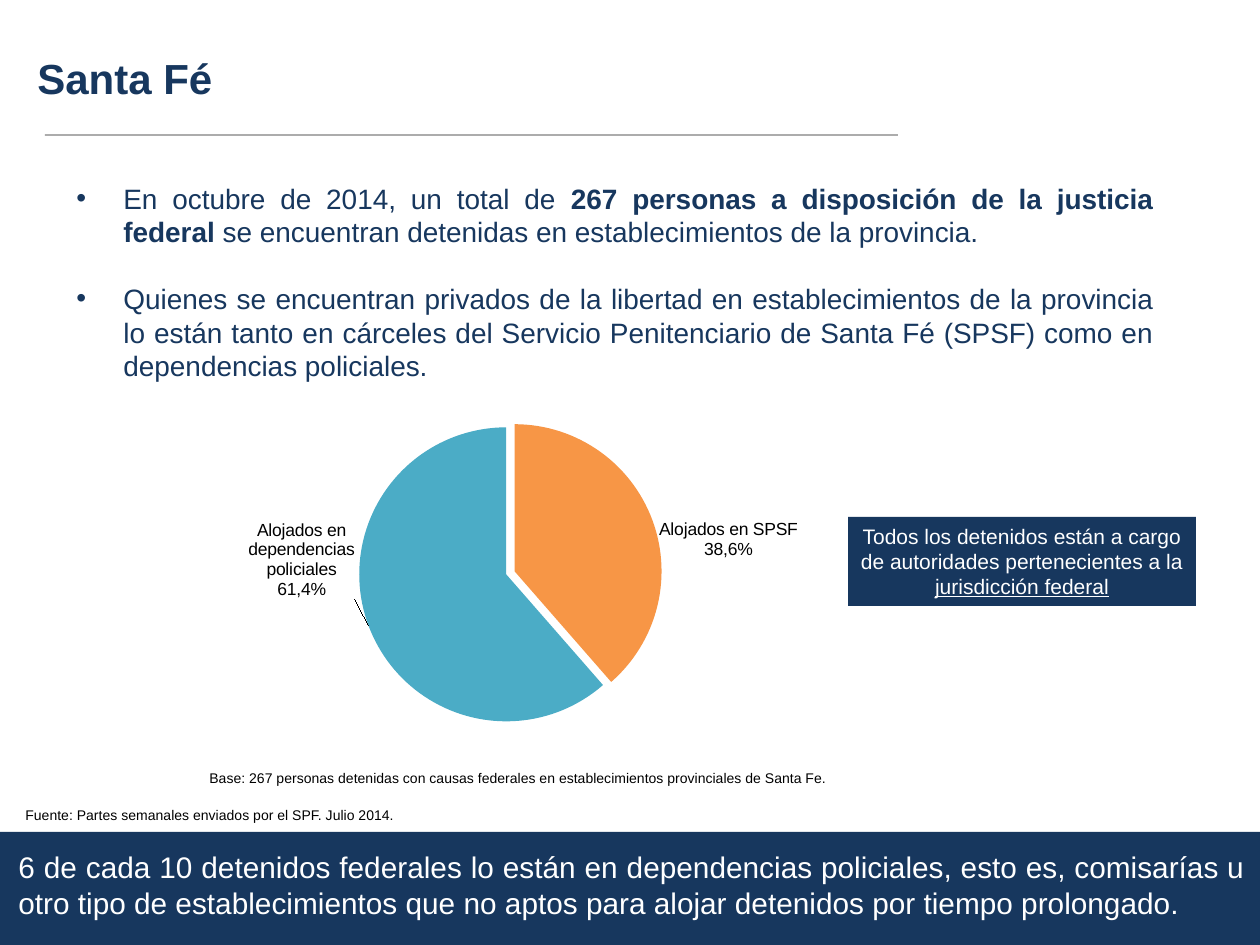
from lxml.etree import SubElement
from pptx import Presentation
from pptx.chart.data import CategoryChartData
from pptx.dml.color import RGBColor
from pptx.enum.chart import XL_CHART_TYPE, XL_LABEL_POSITION
from pptx.enum.shapes import MSO_CONNECTOR, MSO_SHAPE
from pptx.enum.text import MSO_ANCHOR, PP_ALIGN
from pptx.oxml import parse_xml
from pptx.oxml.ns import nsdecls, qn
from pptx.util import Pt

NAVY = RGBColor(0x17, 0x37, 0x5E)
ORANGE = RGBColor(0xF7, 0x96, 0x46)
TEAL = RGBColor(0x4B, 0xAC, 0xC6)
BLACK = RGBColor(0, 0, 0)
WHITE = RGBColor(0xFF, 0xFF, 0xFF)


def px(*lengths):
    """Turn pixels, 126 to the inch, into EMU."""
    return [round(length * 914400 / 126) for length in lengths]


def add_runs(para, runs, size, color):
    """Add (text, style) runs, where style is "", "bold" or "underline"."""
    for text, style in runs:
        span = para.add_run()
        span.text = text
        span.font.name = "Arial"
        span.font.size = Pt(size)
        span.font.color.rgb = color
        if style:
            setattr(span.font, style, True)


deck = Presentation()
deck.slide_width, deck.slide_height = px(1260, 945)
page = deck.slides.add_slide(deck.slide_layouts[6])
shapes = page.shapes

# Title and rule
title = shapes.add_textbox(*px(25, 46, 932, 78)).text_frame
title.word_wrap = True
add_runs(title.paragraphs[0], [("Santa Fé", "bold")], 24, NAVY)

rule = shapes.add_connector(MSO_CONNECTOR.STRAIGHT, *px(45, 135, 898, 135))
rule.line.color.rgb = BLACK
rule.line.width = Pt(0.75)
rule_color = rule.line.fill._xPr.find(".//" + qn("a:srgbClr"))
SubElement(rule_color, qn("a:alpha"), val="50000")
SubElement(rule._element.spPr, qn("a:effectLst"))

# Bullets
bullets = [
    [("En octubre de 2014, un total de ", ""),
     ("267 personas a disposición de la justicia federal", "bold"),
     (" se encuentran detenidas en establecimientos de la provincia.", "")],
    [("Quienes se encuentran privados de la libertad en establecimientos de la "
      "provincia lo están tanto en cárceles del Servicio Penitenciario de Santa Fé "
      "(SPSF) como en dependencias policiales.", "")],
]
body = shapes.add_textbox(*px(64, 175, 1102, 208)).text_frame
body.word_wrap = True
indent, = px(47)
for index, runs in enumerate(bullets):
    para = body.add_paragraph() if index else body.paragraphs[0]
    para.alignment = PP_ALIGN.JUSTIFY
    para.space_before = Pt(19 * index)
    properties = para._p.get_or_add_pPr()
    properties.set("marL", str(indent))
    properties.set("indent", str(-indent))
    SubElement(properties, qn("a:buFont"), typeface="Arial")
    SubElement(properties, qn("a:buChar"), char="•")
    add_runs(para, runs, 16, NAVY)

# Pie of places of detention; each label has its shift, width and height
slices = [
    ("Alojados en SPSF", 103, "38,6%", ORANGE, (0, 0.11, 0.15, 0.16)),
    ("Alojados en dependencias policiales", 164, "61,4%", TEAL, (-0.01, -0.28, 0.17, 0.21)),
]
data = CategoryChartData()
data.categories = [name for name, *_ in slices]
data.add_series("Series 1", [count for _, count, *_ in slices])
chart = shapes.add_chart(XL_CHART_TYPE.PIE, *px(151, 391, 698, 387), data).chart
chart.has_legend = False
chart.has_title = False
chart.font.name = "Calibri"
chart.font.size = Pt(18)
chart.font.color.rgb = BLACK
pie = chart.plots[0]
pie.vary_by_categories = True
series = pie.series[0]
labels = series.data_labels
labels.show_value = labels.show_percentage = labels.show_category_name = True
labels.font.name = "Arial"
labels.font.size = Pt(10)
labels.font.bold = True
for index, (name, _, share, color, (x, y, width, height)) in enumerate(slices):
    point = series.points[index]
    point.format.fill.solid()
    point.format.fill.fore_color.rgb = color
    slice_format = point.format.fill._xPr
    slice_format.addprevious(parse_xml(f'<c:explosion {nsdecls("c")} val="3"/>'))

    label = point.data_label
    label.position = XL_LABEL_POSITION.OUTSIDE_END
    frame = label.text_frame
    add_runs(frame.paragraphs[0], [(name, "")], 10, BLACK)
    add_runs(frame.add_paragraph(), [(share, "")], 10, BLACK)
    label_xml = frame._txBody.getparent().getparent()
    for flag in ("showVal", "showCatName", "showPercent"):
        label_xml.find(qn(f"c:{flag}")).set("val", "1")
    label_xml.find(qn("c:idx")).addnext(parse_xml(
        f'<c:layout {nsdecls("c")}><c:manualLayout>'
        f'<c:x val="{x}"/><c:y val="{y}"/></c:manualLayout></c:layout>'))
    label_xml.append(parse_xml(
        f'<c:extLst {nsdecls("c")}><c:ext uri="{{CE6537A1-D6FC-4f65-9D91-7224C49458BB}}" '
        'xmlns:c15="http://schemas.microsoft.com/office/drawing/2012/chart">'
        f'<c15:layout><c:manualLayout><c:w val="{width}"/><c:h val="{height}"/>'
        '</c:manualLayout></c15:layout></c:ext></c:extLst>'))

plot_area = chart._chartSpace.chart.plotArea
for old_layout in plot_area.findall(qn("c:layout")):
    plot_area.remove(old_layout)
layout = SubElement(plot_area, qn("c:layout"))
plot_area.insert(0, layout)
manual = SubElement(layout, qn("c:manualLayout"))
for tag, value in [("layoutTarget", "inner"), ("xMode", "edge"), ("yMode", "edge"),
                   ("x", "0.3"), ("y", "0.09"), ("w", "0.43"), ("h", "0.76")]:
    SubElement(manual, qn(f"c:{tag}"), val=value)

# Notes under the chart
notes = [
    (13, 800, 401, "Fuente: Partes semanales enviados por el SPF. Julio 2014."),
    (197, 763, 650, "Base: 267 personas detenidas con causas federales en "
                    "establecimientos provinciales de Santa Fe."),
]
for left, top, width, text in notes:
    note = shapes.add_textbox(*px(left, top, width, 30)).text_frame
    note.word_wrap = False
    add_runs(note.paragraphs[0], [(text, "")], 8, BLACK)

# Navy callout and footer band
callout = shapes.add_shape(MSO_SHAPE.RECTANGLE, *px(848, 517, 348, 89))
band = shapes.add_shape(MSO_SHAPE.RECTANGLE, *px(0, 832, 1260, 116))
for box in (callout, band):
    box.shadow.inherit = False
    box.fill.solid()
    box.fill.fore_color.rgb = NAVY
    box.line.fill.background()

callout.text_frame.word_wrap = True
callout.text_frame.vertical_anchor = MSO_ANCHOR.TOP
para = callout.text_frame.paragraphs[0]
para.alignment = PP_ALIGN.CENTER
add_runs(para, [
    ("Todos los detenidos están a cargo de autoridades pertenecientes a la ", ""),
    ("jurisdicción federal", "underline"),
], 12, WHITE)

footer = shapes.add_textbox(*px(6, 843, 1252, 84)).text_frame
footer.word_wrap = True
para = footer.paragraphs[0]
para.alignment = PP_ALIGN.JUSTIFY
add_runs(para, [
    ("6 de cada 10 detenidos federales lo están en dependencias policiales, esto es, "
     "comisarías u otro tipo de establecimientos que no aptos para alojar detenidos "
     "por tiempo prolongado.", ""),
], 17, WHITE)

deck.save("out.pptx")
